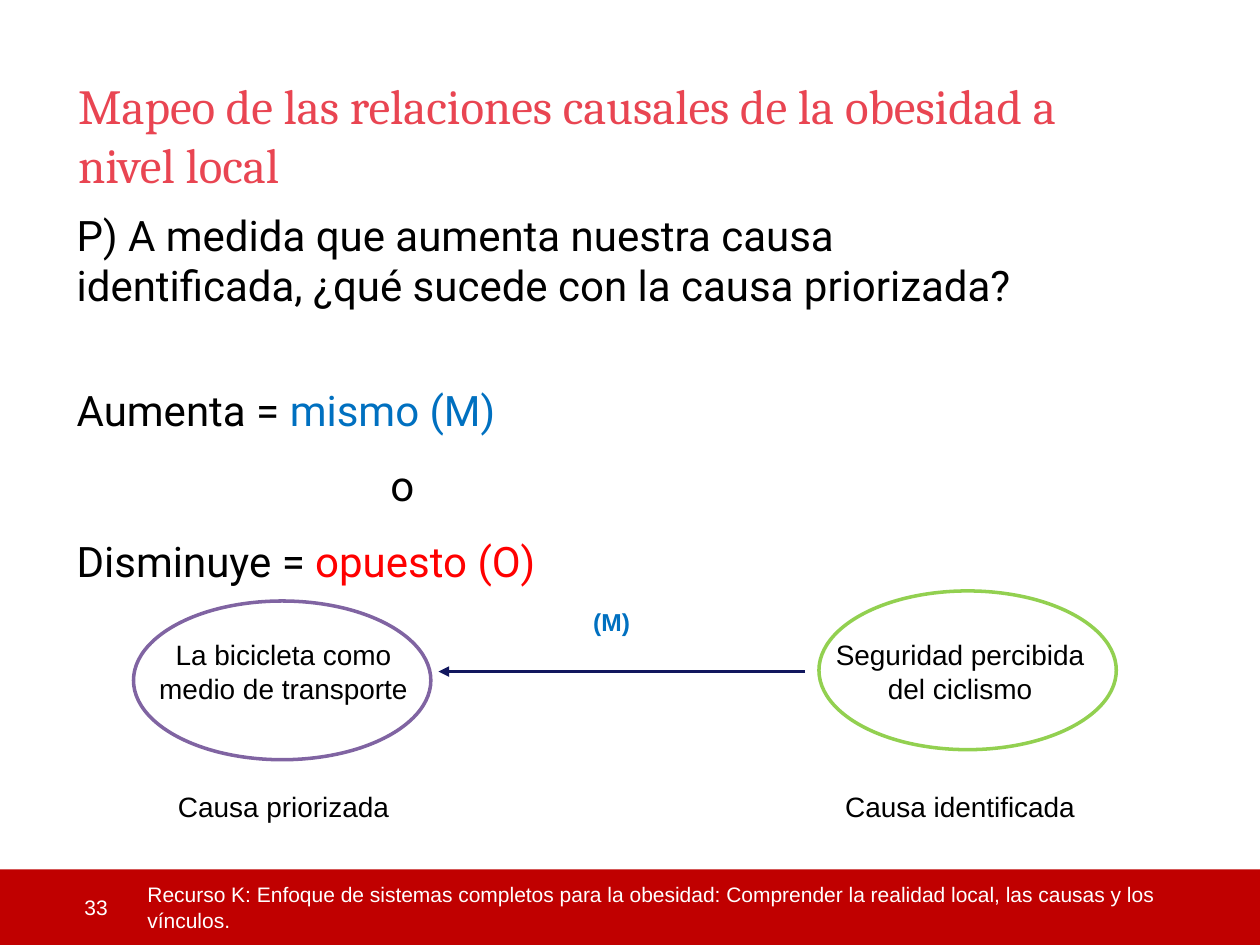
from lxml import etree
from pptx import Presentation
from pptx.dml.color import RGBColor
from pptx.enum.shapes import MSO_CONNECTOR, MSO_SHAPE
from pptx.enum.text import MSO_ANCHOR, PP_ALIGN
from pptx.oxml.ns import qn
from pptx.util import Inches, Pt

STRAIGHT = MSO_CONNECTOR.STRAIGHT
RECTANGLE, OVAL = MSO_SHAPE.RECTANGLE, MSO_SHAPE.OVAL
TOP, MIDDLE = MSO_ANCHOR.TOP, MSO_ANCHOR.MIDDLE
LEFT, CENTER = PP_ALIGN.LEFT, PP_ALIGN.CENTER


def color(value):
    return RGBColor.from_string(value)


def add_text(slide, box, paragraphs, font, size, anchor=TOP, align=LEFT,
             insets=(0.1, 0.05, 0.1, 0.05), wrap=True):
    shape = slide.shapes.add_textbox(*map(Inches, box))
    frame = shape.text_frame
    frame.word_wrap = wrap
    frame.vertical_anchor = anchor
    (frame.margin_left, frame.margin_top,
     frame.margin_right, frame.margin_bottom) = map(Inches, insets)
    for index, parts in enumerate(paragraphs):
        paragraph = frame.add_paragraph() if index else frame.paragraphs[0]
        paragraph.alignment = align
        for text, text_color in parts:
            run = paragraph.add_run()
            run.text = text
            run.font.name = font
            run.font.size = Pt(size)
            run.font.color.rgb = color(text_color)
    return frame


presentation = Presentation()
presentation.slide_width = Inches(10)
presentation.slide_height = Inches(7.5)
slide = presentation.slides.add_slide(presentation.slide_layouts[6])

footer = slide.shapes.add_shape(RECTANGLE, Inches(0), Inches(6.9), Inches(10), Inches(0.6))
footer.shadow.inherit = False
footer.fill.solid()
footer.fill.fore_color.rgb = color("C00000")
footer.line.fill.background()

footer_text = ("Recurso K: Enfoque de sistemas completos para la obesidad: "
               "Comprender la realidad local, las causas y los vínculos.")
for left, width, inset, text in [(0, 0.98, 0.67, "33"), (0.98, 8.82, 0.19, footer_text)]:
    add_text(slide, (left, 6.9, width, 0.6), [[(text, "FFFFFF")]], "Arial", 12,
             MIDDLE, insets=(inset, 0, 0, 0))

add_text(slide, (0.62, 0.6, 8.48, 1.02),
         [[("Mapeo de las relaciones causales de la obesidad a nivel local", "E94552")]],
         "Cambria", 28, insets=(0, 0, 0, 0))

question = "P) A medida que aumenta nuestra causa identificada, ¿qué sucede con la causa priorizada?"
body = add_text(slide, (0.51, 1.61, 7.71, 3.1), [
    [(question, "000000")],
    [("Aumenta = ", "000000"), ("mismo (M)", "0070C0")],
    [("o", "000000")],
    [("Disminuye = ", "000000"), ("opuesto (O)", "FF0000")],
], "Roboto", 24)
increase, alternative, decrease = body.paragraphs[1:]
for paragraph in (increase, alternative, decrease):
    paragraph.line_spacing = 1.5
increase.space_before = Pt(28)
alternative_properties = alternative._p.get_or_add_pPr()
alternative_properties.set("marL", str(Inches(2.49)))
alternative_properties.set("indent", "0")

causes = [
    (1.02, "La bicicleta como medio de transporte", "Causa priorizada", 1.06, 4.77, "8064A2"),
    (6.39, "Seguridad percibida del ciclismo", "Causa identificada", 6.5, 4.69, "92D050"),
]
for left, cause, caption, oval_left, oval_top, outline in causes:
    for text, top, height in [(cause, 4.65, 1.36), (caption, 5.94, 0.92)]:
        add_text(slide, (left, top, 2.46, height), [[(text, "000000")]],
                 "Arial", 16, MIDDLE, CENTER)
    oval = slide.shapes.add_shape(OVAL, Inches(oval_left), Inches(oval_top),
                                  Inches(2.36), Inches(1.26))
    oval.shadow.inherit = False
    oval.fill.background()
    oval.line.color.rgb = color(outline)
    oval.line.width = Pt(2)

arrow = slide.shapes.add_connector(STRAIGHT, Inches(6.39), Inches(5.33),
                                   Inches(3.48), Inches(5.33))
arrow.line.color.rgb = color("11175E")
arrow.line.width = Pt(2)
etree.SubElement(arrow.line._get_or_add_ln(), qn("a:tailEnd"), type="triangle")
etree.SubElement(arrow._element.spPr, qn("a:effectLst"))

sign = add_text(slide, (4.61, 4.65, 0.49, 0.41), [[("(M)", "0070C0")]], "Arial", 14, wrap=False)
sign.paragraphs[0].line_spacing = 1.5
sign.paragraphs[0].runs[0].font.bold = True

presentation.save("out.pptx")
